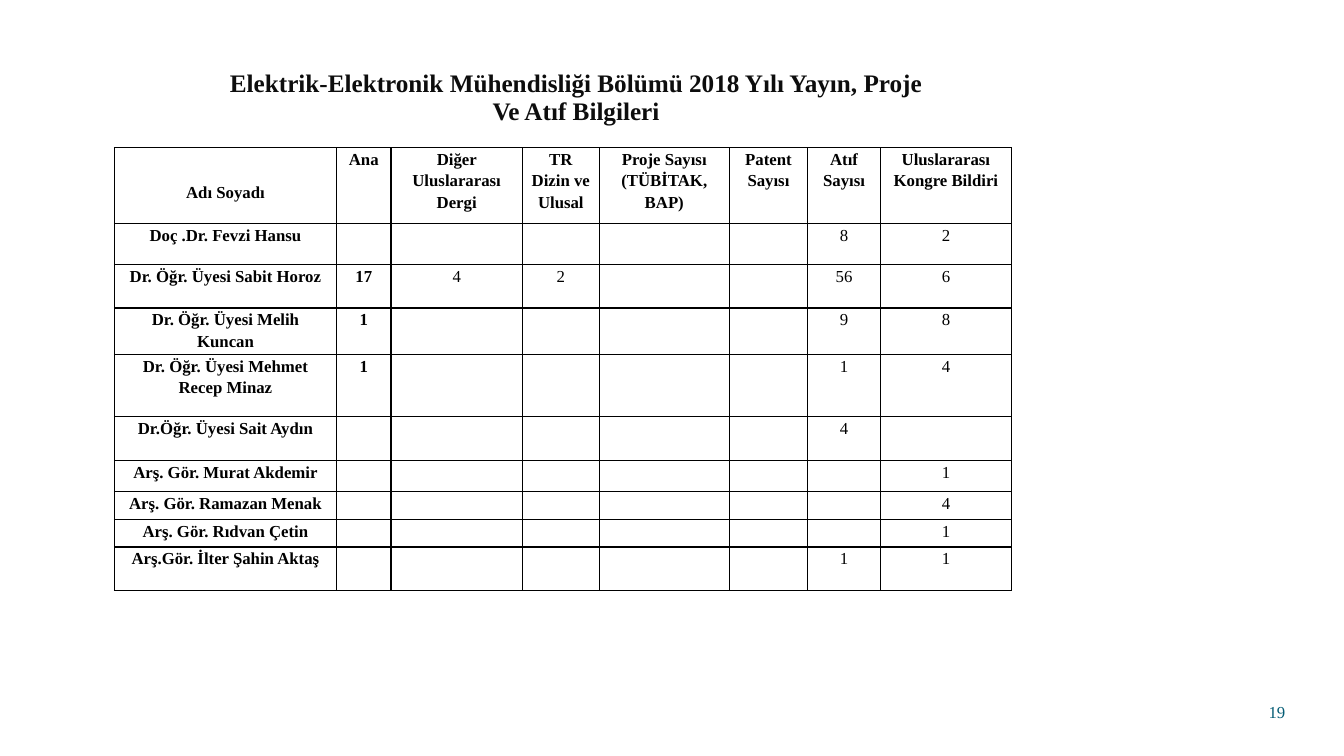
"""Build the 2018 publication, project and citation table of the department."""
import dataclasses

import lxml.etree
import pptx
import pptx.dml.color
import pptx.enum.text
import pptx.oxml.ns
import pptx.util

Pt = pptx.util.Pt
Align = pptx.enum.text.PP_ALIGN
Anchor = pptx.enum.text.MSO_ANCHOR

TITLE = "Elektrik-Elektronik Mühendisliği Bölümü 2018 Yılı Yayın, Proje Ve Atıf Bilgileri"
HEADINGS = ["Adı Soyadı", "Ana", "Diğer Uluslararası Dergi", "TR Dizin ve Ulusal",
            "Proje Sayısı (TÜBİTAK, BAP)", "Patent Sayısı", "Atıf Sayısı",
            "Uluslararası Kongre Bildiri"]
STAFF = [
    ["Doç .Dr. Fevzi Hansu", "", "", "", "", "", "8", "2"],
    ["Dr. Öğr. Üyesi Sabit Horoz", "17", "4", "2", "", "", "56", "6"],
    ["Dr. Öğr. Üyesi Melih Kuncan", "1", "", "", "", "", "9", "8"],
    ["Dr. Öğr. Üyesi Mehmet Recep Minaz", "1", "", "", "", "", "1", "4"],
    ["Dr.Öğr. Üyesi Sait Aydın", "", "", "", "", "", "4", ""],
    ["Arş. Gör. Murat Akdemir", "", "", "", "", "", "", "1"],
    ["Arş. Gör. Ramazan Menak", "", "", "", "", "", "", "4"],
    ["Arş. Gör. Rıdvan Çetin", "", "", "", "", "", "", "1"],
    ["Arş.Gör. İlter Şahin Aktaş", "", "", "", "", "", "1", "1"],
]
COLUMN_WIDTHS = [158.6, 38.9, 93.9, 54.9, 92.9, 56, 52, 93.6]
ROW_HEIGHTS = [54, 29.5, 31, 31, 44.6, 31.2, 22.3, 20, 19.6, 31]


@dataclasses.dataclass
class Theme:
    """Colours and type sizes of the slide."""
    font: str = "Times New Roman"
    title_color: str = "0D0D0D"
    table_color: str = "000000"
    number_color: str = "045C75"
    title_size: float = 18
    body_size: float = 12
    border: float = 1


class Page:
    """One slide together with the style of its elements."""

    def __init__(self, deck, theme):
        """Add a blank slide to the deck."""
        self.theme = theme
        self.slide = deck.slides.add_slide(deck.slide_layouts[6])

    def style(self, para, size, color, bold, align, spacing):
        """Format a paragraph and its runs."""
        para.alignment = align
        para.line_spacing = spacing
        for span in para.runs:
            span.font.name = self.theme.font
            span.font.size = Pt(size)
            span.font.bold = bold
            span.font.color.rgb = pptx.dml.color.RGBColor.from_string(color)

    def text(self, frame, words, size, color, bold=False, align=Align.CENTER, spacing=1.0):
        """Place a text box, vertically centred."""
        box = self.slide.shapes.add_textbox(*map(Pt, frame))
        box.text_frame.word_wrap = True
        box.text_frame.vertical_anchor = Anchor.MIDDLE
        box.text_frame.text = words
        self.style(box.text_frame.paragraphs[0], size, color, bold, align, spacing)

    def borders(self, cell):
        """Draw a solid line on the four sides of a cell."""
        qn = pptx.oxml.ns.qn
        properties = cell._tc.get_or_add_tcPr()
        for index, side in enumerate(("lnL", "lnR", "lnT", "lnB")):
            line = lxml.etree.Element(qn(f"a:{side}"), w=str(Pt(self.theme.border)))
            fill = lxml.etree.SubElement(line, qn("a:solidFill"))
            lxml.etree.SubElement(fill, qn("a:srgbClr"), val=self.theme.table_color)
            properties.insert(index, line)

    def cell(self, cell, words, bold):
        """Fill in one table cell."""
        cell.margin_left = cell.margin_right = Pt(5)
        cell.margin_top = cell.margin_bottom = 0
        cell.fill.background()
        self.borders(cell)
        cell.text_frame.text = words
        para = cell.text_frame.paragraphs[0]
        self.style(para, self.theme.body_size, self.theme.table_color, bold,
                   Align.CENTER, 1.15)
        if not words:
            lxml.etree.SubElement(para._p, pptx.oxml.ns.qn("a:endParaRPr"),
                                  sz=str(int(self.theme.body_size * 100)))

    def table(self, left, top, widths, heights, rows):
        """Place a ruled table with bold headings and bold first two columns."""
        frame = self.slide.shapes.add_table(len(rows), len(widths), Pt(left), Pt(top),
                                            Pt(sum(widths)), Pt(sum(heights)))
        table = frame.table
        table.first_row = table.horz_banding = False
        for column, width in zip(table.columns, widths):
            column.width = Pt(width)
        for row, height in zip(table.rows, heights):
            row.height = Pt(height)
        for r, values in enumerate(rows):
            for c, words in enumerate(values):
                self.cell(table.cell(r, c), words, bold=r == 0 or c < 2)
        return table


def main():
    """Build and save the slide."""
    deck = pptx.Presentation()
    deck.slide_width, deck.slide_height = Pt(960), Pt(540)
    theme = Theme()
    page = Page(deck, theme)
    page.text((156, 49, 511, 42.5), TITLE, theme.title_size, theme.title_color,
              bold=True, spacing=0.9)
    table = page.table(81.8, 105.5, COLUMN_WIDTHS, ROW_HEIGHTS, [HEADINGS] + STAFF)
    table.cell(0, 0).margin_top = Pt(23.6)
    page.text((867.6, 497.5, 57.6, 21.6), "19", theme.body_size, theme.number_color,
              align=Align.RIGHT)
    deck.save("out.pptx")


if __name__ == "__main__":
    main()
